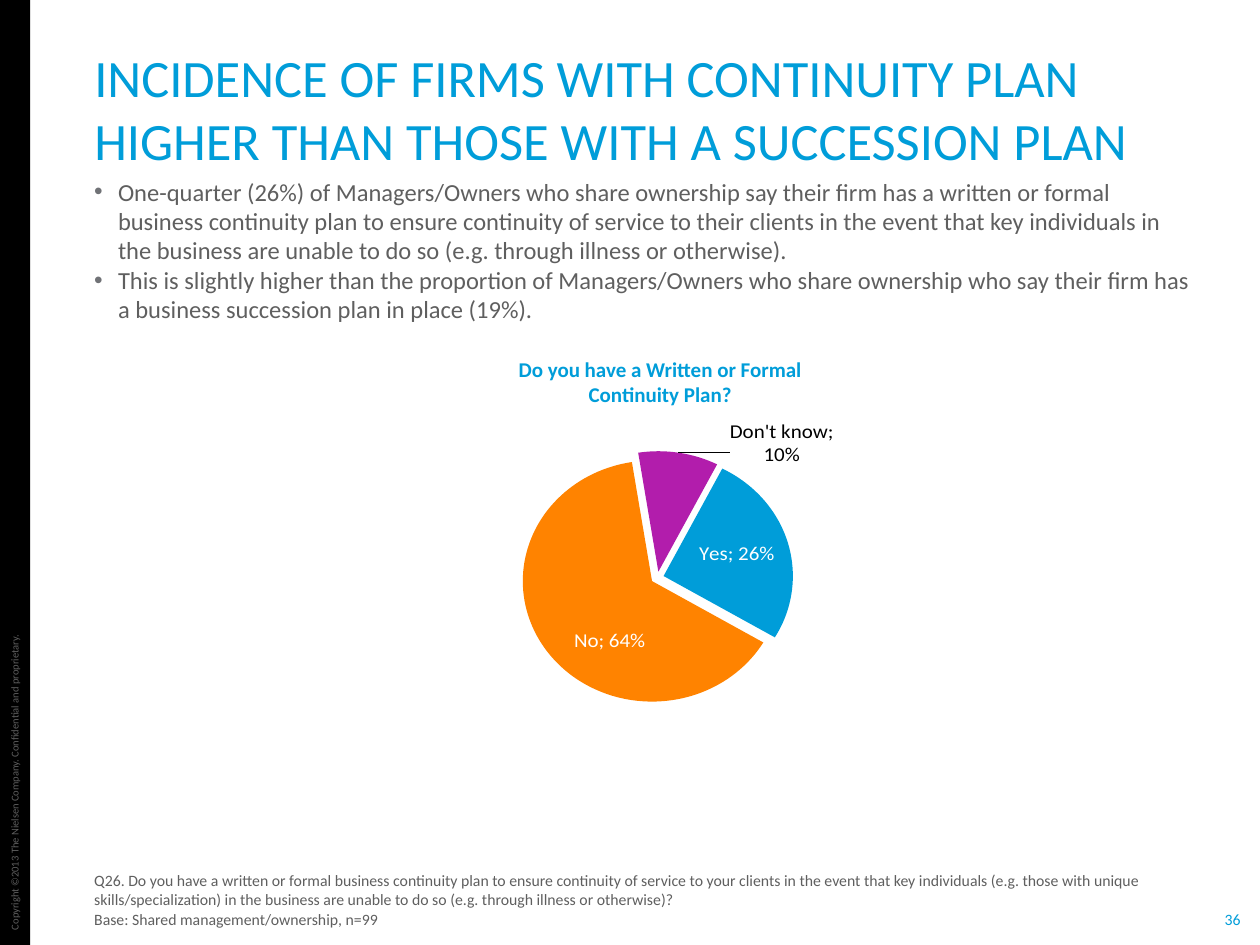
from dataclasses import dataclass
from lxml.etree import SubElement as Sub
from pptx import Presentation
from pptx.chart.data import CategoryChartData as Data
from pptx.dml.color import RGBColor
from pptx.enum.chart import XL_CHART_TYPE as Kind, XL_LABEL_POSITION as Pos
from pptx.enum.shapes import MSO_SHAPE as Form
from pptx.enum.text import MSO_ANCHOR as Anchor, MSO_AUTO_SIZE as Auto, PP_ALIGN as Align
from pptx.oxml import parse_xml
from pptx.oxml.ns import qn
from pptx.util import Cm, Pt

BLUE = RGBColor(0x00, 0x9D, 0xD9)
ORANGE = RGBColor(0xFF, 0x83, 0x00)
PURPLE = RGBColor(0xB2, 0x1D, 0xAC)
GREY = RGBColor(0x5F, 0x5F, 0x5F)
BLACK = RGBColor(0, 0, 0)
WHITE = RGBColor(0xFF, 0xFF, 0xFF)
FONT = "Calibri"
CHART_NS = "http://schemas.openxmlformats.org/drawingml/2006/chart"


@dataclass
class Block:
    box: tuple
    lines: list
    size: float
    color: RGBColor = GREY
    bold: bool = False
    align: Align = Align.LEFT
    anchor: Anchor = Anchor.TOP
    inset: float = 0.25
    gap: float = 0
    bullet: bool = False
    wrap: bool = True
    turn: float = 0


@dataclass
class Slice:
    name: str
    share: float
    fill: RGBColor
    ink: RGBColor
    pos: Pos
    shift: tuple


TITLE = Block((1.65, 1.88, 22.68, 1.57),
              ["INCIDENCE OF FIRMS WITH CONTINUITY PLAN HIGHER THAN THOSE WITH A SUCCESSION PLAN"],
              30, BLUE, anchor=Anchor.BOTTOM)
BLOCKS = [
    Block((-3, 15.52, 6.58, 0.5),
          ["Copyright ©2013 The Nielsen Company. Confidential and proprietary."],
          6, align=Align.CENTER, anchor=Anchor.MIDDLE, wrap=False, turn=270),
    Block((24.66, 18.34, 0.38, 0.38), ["36"], 9, BLUE,
          align=Align.CENTER, anchor=Anchor.MIDDLE, inset=0, wrap=False),
    Block((1.65, 3.56, 22.66, 2.16),
          ["One-quarter (26%) of Managers/Owners who share ownership say their firm has a written or formal business continuity plan to ensure continuity of service to their clients in the event that key individuals in the business are unable to do so (e.g. through illness or otherwise).",
           "This is slightly higher than the proportion of Managers/Owners who share ownership who say their firm has a business succession plan in place (19%)."],
          14, bullet=True),
    Block((8.13, 7.19, 10.36, 0.71),
          ["Do you have a Written or Formal", "Continuity Plan?"],
          12, BLUE, bold=True, align=Align.CENTER),
    Block((1.65, 17.7, 23.75, 1.02),
          ["Q26. Do you have a written or formal business continuity plan to ensure continuity of service to your clients in the event that key individuals (e.g. those with unique skills/specialization) in the business are unable to do so (e.g. through illness or otherwise)?",
           "Base: Shared management/ownership, n=99"],
          9, anchor=Anchor.BOTTOM, gap=0.6),
]
SLICES = [
    Slice("Yes", 0.26, BLUE, WHITE, Pos.CENTER, (0.02, -0.02)),
    Slice("No", 0.64, ORANGE, WHITE, Pos.CENTER, (0.02, 0.09)),
    Slice("Don't know", 0.1, PURPLE, BLACK, Pos.OUTSIDE_END, (0.09, 0.04)),
]


def add_mark(par) -> None:
    props = par._p.get_or_add_pPr()
    props.set("marL", str(Cm(0.48)))
    props.set("indent", str(-Cm(0.48)))
    tint = Sub(props, qn("a:buClr"))
    Sub(tint, qn("a:srgbClr"), val="707276")
    Sub(props, qn("a:buFont"), typeface="Arial")
    Sub(props, qn("a:buChar"), char="•")


def fill_text(shape, block: Block) -> None:
    shape.left, shape.top, shape.width, shape.height = map(Cm, block.box)
    shape.rotation = block.turn
    frame = shape.text_frame
    frame.text = "\n".join(block.lines)
    frame.word_wrap = block.wrap
    frame.auto_size = Auto.NONE
    frame.vertical_anchor = block.anchor
    frame.margin_left = frame.margin_right = Cm(block.inset)
    frame.margin_top = frame.margin_bottom = 0
    for num, par in enumerate(frame.paragraphs):
        par.alignment = block.align
        par.space_before = Pt(block.gap if num else 0)
        if block.bullet:
            add_mark(par)
        for run in par.runs:
            set_font(run.font, block.size, block.color, block.bold)


def set_font(font, size: float, color: RGBColor, bold: bool = False) -> None:
    font.name, font.size, font.bold = FONT, Pt(size), bold
    font.color.rgb = color


def make_place(x: float, y: float, extra: str = ""):
    return parse_xml(
        f'<c:layout xmlns:c="{CHART_NS}"><c:manualLayout>{extra}'
        f'<c:x val="{x}"/><c:y val="{y}"/></c:manualLayout></c:layout>')


def style_slice(point, part: Slice) -> None:
    point.format.fill.solid()
    point.format.fill.fore_color.rgb = part.fill
    label = point.data_label
    set_font(label.font, 12, part.ink)
    label.position = part.pos
    node = label._dLbl
    node.find(qn("c:showCatName")).set("val", "1")
    form = parse_xml(f'<c:numFmt xmlns:c="{CHART_NS}" formatCode="#,##0%" sourceLinked="0"/>')
    node.find(qn("c:idx")).addnext(make_place(*part.shift))
    node.find(qn("c:layout")).addnext(form)
    Sub(node, qn("c:separator")).text = "; "


def add_pie(slide) -> None:
    data = Data(number_format="0%")
    data.categories = [part.name for part in SLICES]
    data.add_series("Series 1", [part.share for part in SLICES])
    box = map(Cm, (7.19, 8.05, 11.23, 6.15))
    chart = slide.shapes.add_chart(Kind.PIE, *box, data).chart
    chart.has_legend = chart.has_title = False
    set_font(chart.font, 18, GREY)
    plot = chart.plots[0]
    plot.vary_by_categories = True
    row = plot.series[0]
    burst = parse_xml(f'<c:explosion xmlns:c="{CHART_NS}" val="5"/>')
    row._element.find(qn("c:tx")).addnext(burst)
    for num, part in enumerate(SLICES):
        style_slice(row.points[num], part)
    pie = plot._element
    for old in pie.findall(qn("c:firstSliceAng")):
        pie.remove(old)
    Sub(pie, qn("c:firstSliceAng"), val="27")
    area = pie.getparent()
    for old in area.findall(qn("c:layout")):
        area.remove(old)
    modes = ('<c:layoutTarget val="inner"/><c:xMode val="edge"/><c:yMode val="edge"/>')
    place = make_place(0.26, 0.11, modes)
    for key, size in (("c:w", "0.56"), ("c:h", "0.89")):
        Sub(place[0], qn(key), val=size)
    area.insert(0, place)


def main() -> None:
    deck = Presentation()
    deck.slide_width, deck.slide_height = Cm(25.4), Cm(19.05)
    slide = deck.slides.add_slide(deck.slide_layouts[5])
    strip = slide.shapes.add_shape(Form.RECTANGLE, 0, 0, Cm(0.61), deck.slide_height)
    strip.shadow.inherit = False
    strip.fill.solid()
    strip.fill.fore_color.rgb = BLACK
    strip.line.fill.background()
    fill_text(slide.shapes.title, TITLE)
    for block in BLOCKS:
        fill_text(slide.shapes.add_textbox(0, 0, 0, 0), block)
    add_pie(slide)
    deck.save("out.pptx")


if __name__ == "__main__":
    main()
